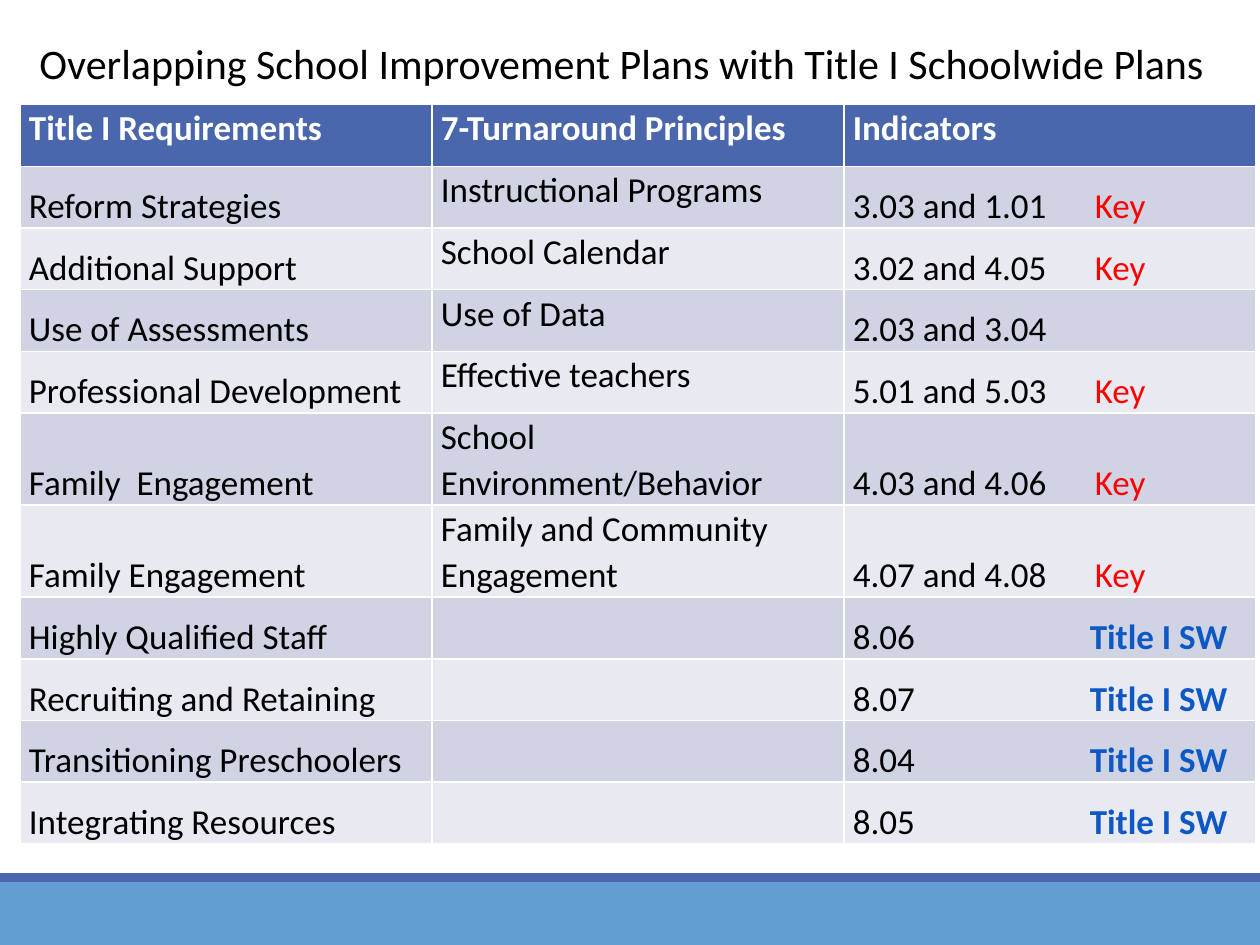
"""Build a slide that maps Title I requirements to turnaround principles and indicators."""
from lxml.etree import SubElement
from pptx import Presentation
from pptx.dml.color import RGBColor as Color
from pptx.enum.shapes import MSO_SHAPE as Preset
from pptx.enum.text import MSO_ANCHOR as Anchor, MSO_AUTO_SIZE as Fit, PP_ALIGN as Align
from pptx.oxml.ns import qn
from pptx.util import Inches, Pt

TITLE = "Overlapping School Improvement Plans with Title I Schoolwide Plans"
HEADERS = ("Title I Requirements", "7-Turnaround Principles", "Indicators")
KEY, SCHOOLWIDE = "Key", "Title I SW"
ROWS = [
    ("Reform Strategies", "Instructional Programs", "3.03 and 1.01", KEY),
    ("Additional Support", "School Calendar", "3.02 and 4.05", KEY),
    ("Use of Assessments", "Use of Data", "2.03 and 3.04", None),
    ("Professional Development", "Effective teachers", "5.01 and 5.03", KEY),
    ("Family  Engagement", "School Environment/Behavior", "4.03 and 4.06", KEY),
    ("Family Engagement", "Family and Community Engagement", "4.07 and 4.08", KEY),
    ("Highly Qualified Staff", "", "8.06", SCHOOLWIDE),
    ("Recruiting and Retaining", "", "8.07", SCHOOLWIDE),
    ("Transitioning Preschoolers", "", "8.04", SCHOOLWIDE),
    ("Integrating Resources", "", "8.05", SCHOOLWIDE),
]
THEME = {
    "font": "Calibri", "title": 24, "body": 20,
    "ink": "000000", "paper": "FFFFFF", "header": "4A66AC", "footer": "629DD1",
    "bands": ("D0D3E3", "E9EAF1"),
}
TAGS = {
    KEY: {"color": "FF0000", "bold": False, "tab": 1.92},
    SCHOOLWIDE: {"color": "0E58C4", "bold": True, "tab": 1.88},
}
BARS = [(7, 0.5, THEME["footer"]), (6.93, 0.07, THEME["header"])]
TABLE_LEFT, TABLE_TOP, COLUMN_WIDTH = 0.16, 0.83, 3.27
ROW_HEIGHT, TALL_HEIGHT, TALL_ROWS = 0.49, 0.73, (5, 6)


def paint(target, color):
    target.fill.solid()
    target.fill.fore_color.rgb = Color.from_string(color)


def add_span(para, text, color, size=THEME["body"], bold=False):
    span = para.add_run()
    span.text = text
    for name, value in {"name": THEME["font"], "size": Pt(size), "bold": bold}.items():
        setattr(span.font, name, value)
    span.font.color.rgb = Color.from_string(color)


def add_tab_stop(para, position):
    stops = SubElement(para._p.get_or_add_pPr(), qn("a:tabLst"))
    SubElement(stops, qn("a:tab"), pos=str(Inches(position)), algn="l")


def fill_cell(cell, text, fill, color, anchor, bold=False, tag=None):
    layout = {
        "margin_left": Inches(0.07), "margin_right": Inches(0.07),
        "margin_top": 0, "margin_bottom": 0, "vertical_anchor": anchor,
    }
    for name, value in layout.items():
        setattr(cell, name, value)
    paint(cell, fill)
    para = cell.text_frame.paragraphs[0]
    para.line_spacing = 1.07
    if text:
        add_span(para, text + ("\t" if tag else ""), color, bold=bold)
    if tag:
        add_tab_stop(para, TAGS[tag]["tab"])
        add_span(para, tag, TAGS[tag]["color"], bold=TAGS[tag]["bold"])


def add_title(page):
    box = page.shapes.title
    place = {"left": 0.17, "top": 0.25, "width": 9.53, "height": 0.5}
    for name, value in place.items():
        setattr(box, name, Inches(value))
    frame = box.text_frame
    settings = {"word_wrap": False, "auto_size": Fit.SHAPE_TO_FIT_TEXT, "vertical_anchor": Anchor.TOP}
    for name, value in settings.items():
        setattr(frame, name, value)
    para = frame.paragraphs[0]
    para.alignment = Align.CENTER
    add_span(para, TITLE, THEME["ink"], THEME["title"])


def add_bars(page):
    for top, height, color in BARS:
        bar = page.shapes.add_shape(Preset.RECTANGLE, 0, Inches(top), Inches(10), Inches(height))
        bar.shadow.inherit = False
        bar.line.fill.background()
        paint(bar, color)


def add_plan_table(page):
    heights = [TALL_HEIGHT if row in TALL_ROWS else ROW_HEIGHT for row in range(len(ROWS) + 1)]
    table = page.shapes.add_table(
        len(heights), len(HEADERS), Inches(TABLE_LEFT), Inches(TABLE_TOP),
        Inches(COLUMN_WIDTH * len(HEADERS)), Inches(sum(heights)),
    ).table
    for row, height in zip(table.rows, heights):
        row.height = Inches(height)
    for column, text in enumerate(HEADERS):
        fill_cell(table.cell(0, column), text, THEME["header"], THEME["paper"], Anchor.TOP, bold=True)
    for row, (*texts, tag) in enumerate(ROWS, 1):
        fill = THEME["bands"][(row - 1) % 2]
        for column, text in enumerate(texts):
            anchor = Anchor.TOP if column == 1 else Anchor.BOTTOM
            fill_cell(table.cell(row, column), text, fill, THEME["ink"], anchor,
                      tag=tag if column == 2 else None)


def main():
    deck = Presentation()
    deck.slide_width, deck.slide_height = Inches(10), Inches(7.5)
    page = deck.slides.add_slide(deck.slide_layouts[5])
    add_bars(page)
    add_plan_table(page)
    add_title(page)
    deck.save("out.pptx")


if __name__ == "__main__":
    main()
